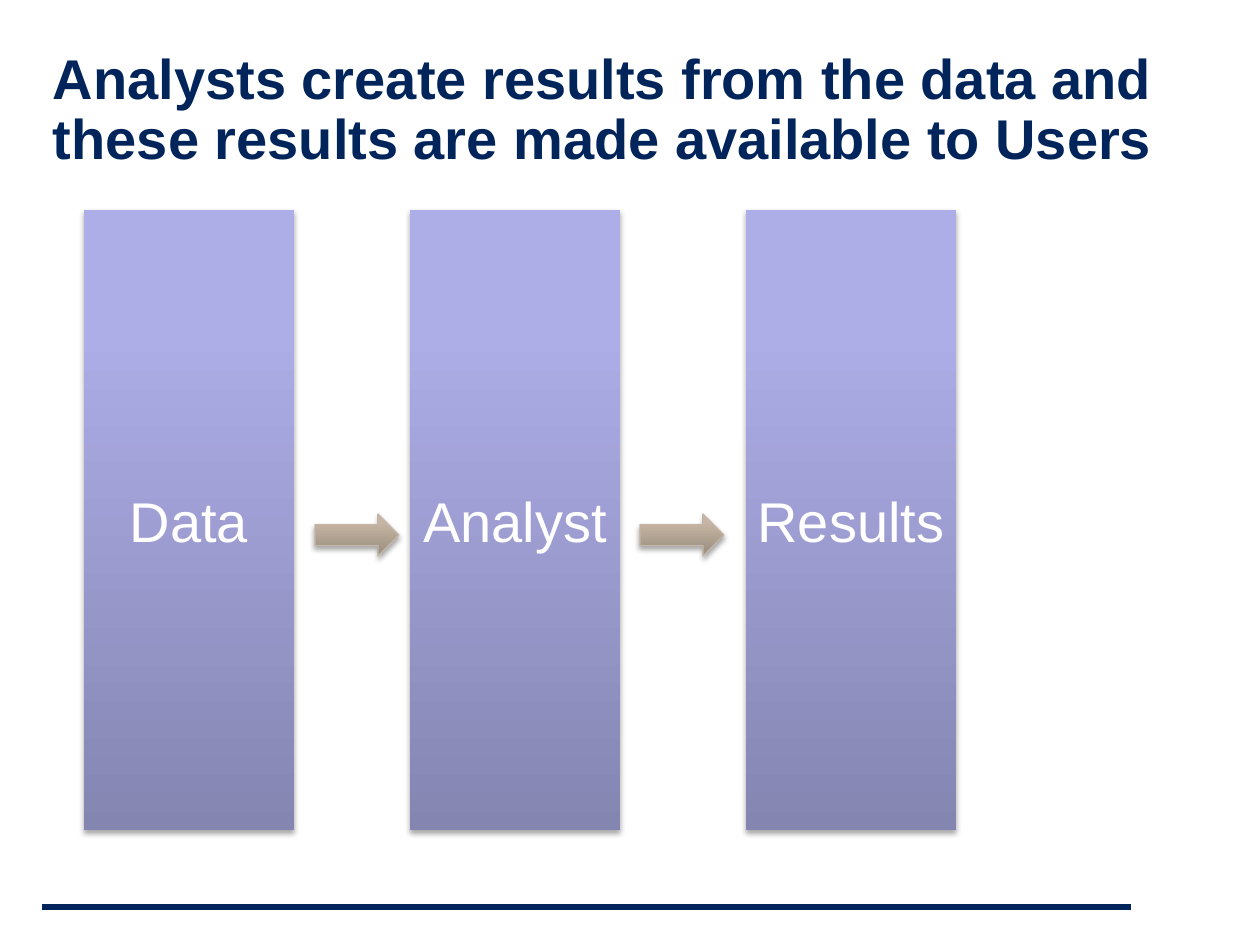
from dataclasses import dataclass

import pptx
import pptx.dml.color
import pptx.enum.shapes
import pptx.enum.text
import pptx.oxml
import pptx.oxml.ns
import pptx.util
from lxml import etree

EMU_PER_PX = 914400 / 126
FONT = "Arial"
COLORS = {"navy": "01255B", "white": "FFFFFF", "arrow_edge": "C4B7A8", "shadow": "000000"}
GRADIENTS = {  # position in percent, from the bottom up
    "lavender": [(0, "8585B2"), (80, "ADADE7"), (100, "ACACE9")],
    "sand": [(0, "988C7D"), (80, "C6B5A3"), (100, "C7B6A3")],
}
SHAPES = pptx.enum.shapes.MSO_SHAPE
ALIGN = pptx.enum.text.PP_ALIGN
ANCHOR = pptx.enum.text.MSO_ANCHOR


@dataclass(frozen=True)
class Box:
    left: int
    top: int
    width: int
    height: int

    def emu(self) -> list:
        return [px(n) for n in (self.left, self.top, self.width, self.height)]


@dataclass(frozen=True)
class Stage:
    label: str
    left: int


STAGES = [Stage("Data", 84), Stage("Analyst", 410), Stage("Results", 746)]
ARROW_LEFTS = [315, 640]


def px(length: int) -> pptx.util.Emu:
    return pptx.util.Emu(round(length * EMU_PER_PX))


def rgb(name: str) -> pptx.dml.color.RGBColor:
    return pptx.dml.color.RGBColor.from_string(COLORS[name])


def add_color(parent, value: str):
    return etree.SubElement(parent, pptx.oxml.ns.qn("a:srgbClr"), val=value)


def set_gradient(shape, stops: list) -> None:
    shape.fill.gradient()
    shape.fill.gradient_angle = 90
    stop_list = shape._element.spPr.find(".//" + pptx.oxml.ns.qn("a:gsLst"))
    for old in list(stop_list):
        stop_list.remove(old)
    for percent, value in stops:
        stop = etree.SubElement(stop_list, pptx.oxml.ns.qn("a:gs"), pos=str(percent * 1000))
        add_color(stop, value)


def set_shadow(shape) -> None:
    shape.shadow.inherit = False
    effects = shape._element.spPr.find(pptx.oxml.ns.qn("a:effectLst"))
    shadow = etree.SubElement(
        effects, pptx.oxml.ns.qn("a:outerShdw"),
        blurRad=str(pptx.util.Pt(3.1)), dist=str(pptx.util.Pt(1.8)),
        dir="5400000", rotWithShape="0")
    color = add_color(shadow, COLORS["shadow"])
    etree.SubElement(color, pptx.oxml.ns.qn("a:alpha"), val="35000")


def write_text(shape, text: str, color: str, bold: bool, align, anchor) -> None:
    frame = shape.text_frame
    frame_format = {
        "margin_left": 0, "margin_top": 0, "margin_right": 0, "margin_bottom": 0,
        "word_wrap": True, "auto_size": pptx.enum.text.MSO_AUTO_SIZE.NONE,
        "vertical_anchor": anchor,
    }
    for name, value in frame_format.items():
        setattr(frame, name, value)
    para = frame.paragraphs[0]
    para.alignment = align
    span = para.add_run()
    span.text = text
    for name, value in {"name": FONT, "size": pptx.util.Pt(32), "bold": bold}.items():
        setattr(span.font, name, value)
    span.font.color.rgb = rgb(color)


def add_block(page, kind, box: Box, gradient: str):
    """Add a shape with a vertical gradient and a soft shadow."""
    shape = page.shapes.add_shape(kind, *box.emu())
    set_gradient(shape, GRADIENTS[gradient])
    shape.line.fill.background()
    set_shadow(shape)
    return shape


def add_stage(page, stage: Stage) -> None:
    block = add_block(page, SHAPES.RECTANGLE, Box(stage.left, 210, 210, 620), "lavender")
    write_text(block, stage.label, "white", False, ALIGN.CENTER, ANCHOR.MIDDLE)


def add_arrow(page, left: int) -> None:
    arrow = add_block(page, SHAPES.RIGHT_ARROW, Box(left, 514, 84, 42), "sand")
    arrow.line.color.rgb = rgb("arrow_edge")
    arrow.line.width = pptx.util.Pt(0.75)


def add_footer_rule(page) -> None:
    rule = page.shapes.add_connector(
        pptx.enum.shapes.MSO_CONNECTOR.STRAIGHT, px(42), px(907), px(1131), px(907))
    rule.line.color.rgb = rgb("navy")
    rule.line.width = pptx.util.Pt(3)
    etree.SubElement(rule._element.spPr, pptx.oxml.ns.qn("a:effectLst"))


def set_title(page, text: str) -> None:
    title = page.shapes.title
    title.left, title.top, title.width, title.height = Box(53, 84, 1134, 88).emu()
    write_text(title, text, "navy", True, ALIGN.LEFT, ANCHOR.BOTTOM)
    title.text_frame.paragraphs[0].line_spacing = 0.9


def main() -> None:
    deck = pptx.Presentation()
    deck.slide_width, deck.slide_height = px(1260), px(945)
    page = deck.slides.add_slide(deck.slide_layouts[5])
    set_title(page, "Analysts create results from the data and "
                    "these results are made available to Users")
    add_footer_rule(page)
    for stage in STAGES:
        add_stage(page, stage)
    for left in ARROW_LEFTS:
        add_arrow(page, left)
    deck.save("out.pptx")


if __name__ == "__main__":
    main()
